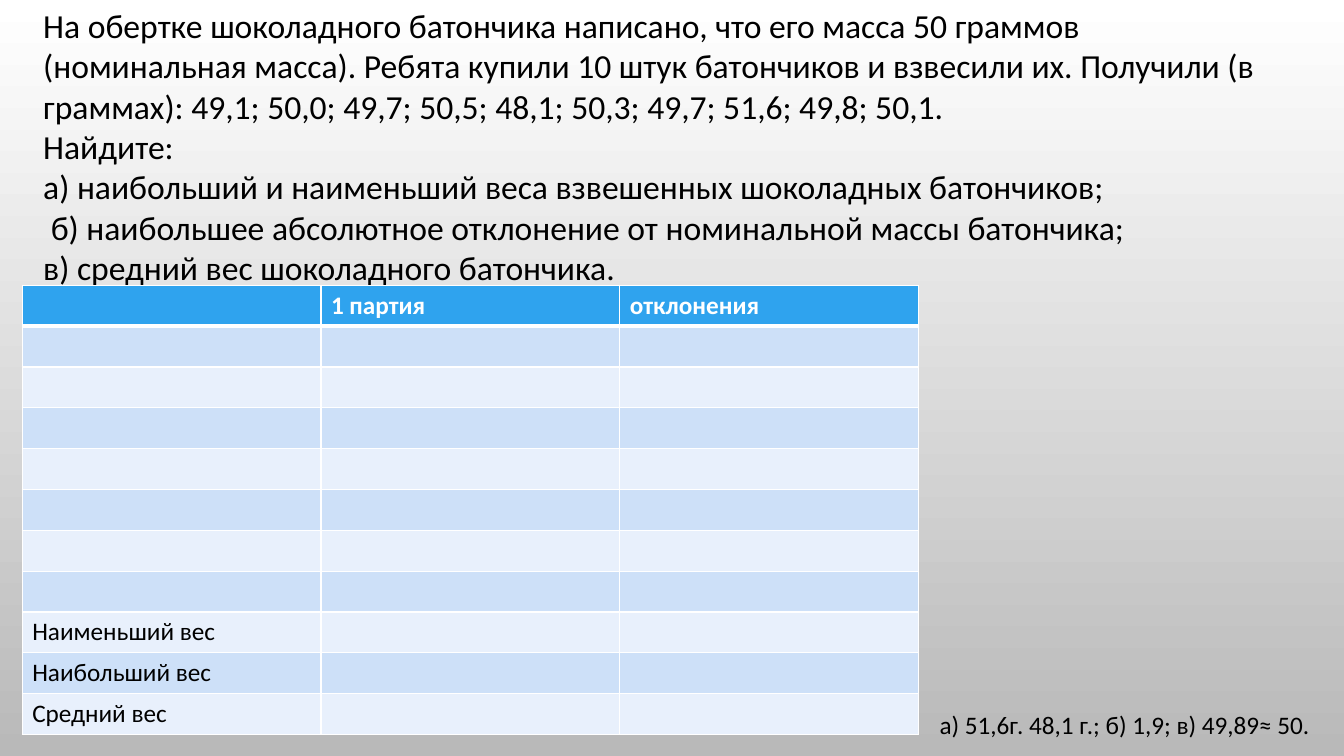
"""Build a worksheet slide about the weights of chocolate bars."""
from dataclasses import dataclass

from lxml.etree import SubElement
from pptx import Presentation
from pptx.dml.color import RGBColor as Rgb
from pptx.enum.text import MSO_AUTO_SIZE as AutoSize
from pptx.oxml.ns import qn
from pptx.slide import Slide
from pptx.table import _Cell as Cell
from pptx.text.text import _Paragraph as Paragraph
from pptx.util import Inches, Pt


@dataclass(frozen=True)
class Theme:
    """Colours and type sizes of the slide."""
    font: str = "Calibri"
    task_size: int = 24
    body_size: int = 18
    text: str = "000000"
    white: str = "FFFFFF"
    grey: str = "B9B9B9"
    header: str = "2FA3EE"
    bands: tuple[str, str] = ("CDE0F8", "E8F0FC")
    thin: int = 1
    thick: int = 3


@dataclass(frozen=True)
class TextBlock:
    """A text box with its place, size and paragraphs."""
    left: float
    top: float
    width: float
    height: float
    size: int
    wrap: bool
    lines: tuple[str, ...]


THEME = Theme()

TEXT_BLOCKS = (
    TextBlock(0.33, 0, 12.55, 2.93, THEME.task_size, True, (
        "На обертке шоколадного батончика написано, что его масса 50 граммов "
        "(номинальная масса). Ребята купили 10 штук батончиков и взвесили их. "
        "Получили (в граммах): 49,1; 50,0; 49,7; 50,5; 48,1; 50,3; 49,7; 51,6; "
        "49,8; 50,1.",
        "Найдите:",
        "а) наибольший и наименьший веса взвешенных шоколадных батончиков;",
        " б) наибольшее абсолютное отклонение от номинальной массы батончика;",
        "в) средний вес шоколадного батончика.",
    )),
    TextBlock(9.22, 6.99, 4.22, 0.4, THEME.body_size, False, (
        "а) 51,6г. 48,1 г.; б) 1,9; в) 49,89≈ 50.",
    )),
)

HEADINGS = ("", "1 партия", "отклонения")
BLANK_ROWS = 7
SUMMARY_LABELS = ("Наименьший вес", "Наибольший вес", "Средний вес")


def add_run(paragraph: Paragraph, text: str, size: int, color: str,
            bold: bool = False) -> None:
    """Append one styled run to a paragraph."""
    run = paragraph.add_run()
    run.text = text
    run.font.name = THEME.font
    run.font.size = Pt(size)
    run.font.bold = bold
    run.font.color.rgb = Rgb.from_string(color)


def add_text_block(slide: Slide, block: TextBlock) -> None:
    """Draw a text box, one paragraph per line."""
    shape = slide.shapes.add_textbox(Inches(block.left), Inches(block.top),
                                     Inches(block.width), Inches(block.height))
    frame = shape.text_frame
    frame.word_wrap = block.wrap
    frame.auto_size = AutoSize.SHAPE_TO_FIT_TEXT
    for index, line in enumerate(block.lines):
        paragraph = frame.add_paragraph() if index else frame.paragraphs[0]
        add_run(paragraph, line, block.size, THEME.text)


def set_borders(cell: Cell, top: int, bottom: int) -> None:
    """Give a cell white borders; call before setting its fill."""
    properties = cell._tc.get_or_add_tcPr()
    widths = {"L": THEME.thin, "R": THEME.thin, "T": top, "B": bottom}
    for side, width in widths.items():
        line = SubElement(properties, qn(f"a:ln{side}"), w=str(Pt(width)))
        fill = SubElement(line, qn("a:solidFill"))
        SubElement(fill, qn("a:srgbClr"), val=THEME.white)


def add_weight_table(slide: Slide) -> None:
    """Draw the banded table for weights and deviations."""
    rows = [HEADINGS, *[("", "", "")] * BLANK_ROWS,
            *[(label, "", "") for label in SUMMARY_LABELS]]
    table = slide.shapes.add_table(len(rows), len(HEADINGS), Inches(0.22), Inches(2.83),
                                   Inches(8.89), Inches(4.46)).table
    for row, texts in enumerate(rows):
        is_header = row == 0
        background = THEME.header if is_header else THEME.bands[(row - 1) % 2]
        color = THEME.white if is_header else THEME.text
        top = THEME.thick if row == 1 else THEME.thin
        bottom = THEME.thick if is_header else THEME.thin
        for column, text in enumerate(texts):
            cell = table.cell(row, column)
            set_borders(cell, top, bottom)
            cell.fill.solid()
            cell.fill.fore_color.rgb = Rgb.from_string(background)
            if text:
                add_run(cell.text_frame.paragraphs[0], text, THEME.body_size,
                        color, is_header)


def set_background(slide: Slide) -> None:
    """Fill the slide from white at the top to grey at the bottom."""
    fill = slide.background.fill
    fill.gradient()
    fill.gradient_angle = 270
    for stop, color in zip(fill.gradient_stops, (THEME.white, THEME.grey)):
        stop.color.rgb = Rgb.from_string(color)


def main() -> None:
    """Build and save the presentation."""
    presentation = Presentation()
    presentation.slide_width = Inches(13.33)
    presentation.slide_height = Inches(7.5)
    slide = presentation.slides.add_slide(presentation.slide_layouts[6])
    set_background(slide)
    task, answer = TEXT_BLOCKS
    add_text_block(slide, task)
    add_weight_table(slide)
    add_text_block(slide, answer)
    presentation.save("out.pptx")


if __name__ == "__main__":
    main()
